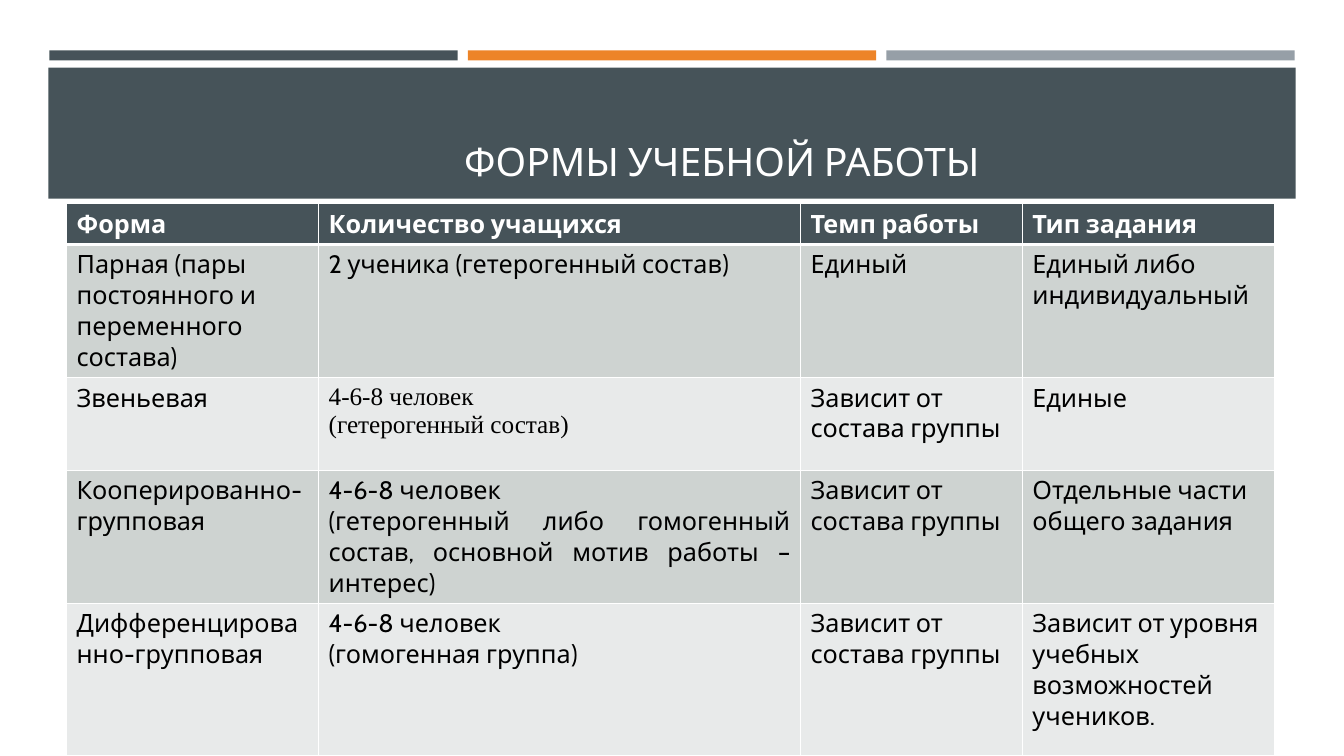
from lxml.etree import SubElement
from pptx import Presentation
from pptx.dml.color import RGBColor
from pptx.enum.shapes import MSO_SHAPE
from pptx.enum.text import MSO_ANCHOR, MSO_AUTO_SIZE, PP_ALIGN
from pptx.oxml.ns import qn
from pptx.util import Inches, Pt

COLORS = {
    "slate": "465359", "orange": "ED8428", "gray": "969FA7",
    "dark_row": "CED3D1", "light_row": "E8EAEA",
    "white": "FFFFFF", "black": "000000",
}
FONT = "Cabin"
COLUMN_WIDTHS = [2.5, 4.78, 2.2, 2.5]
ROW_HEIGHTS = [0.38, 1.23, 0.92, 1.23, 1.51]
# A line break inside a cell starts a new paragraph
ROWS = [
    ["Форма", "Количество учащихся", "Темп работы", "Тип задания"],
    ["Парная (пары постоянного и переменного состава)",
     "2 ученика (гетерогенный состав)", "Единый",
     "Единый либо индивидуальный"],
    ["Звеньевая", "4-6-8 человек\n(гетерогенный состав)",
     "Зависит от состава группы", "Единые"],
    ["Кооперированно-групповая",
     "4-6-8 человек\n(гетерогенный либо гомогенный состав, "
     "основной мотив работы – интерес)",
     "Зависит от состава группы", "Отдельные части общего задания"],
    ["Дифференцированно-групповая", "4-6-8 человек\n(гомогенная группа)",
     "Зависит от состава группы",
     "Зависит от уровня учебных возможностей учеников."],
]
SERIF_CELL = (2, 1)


def color(name):
    return RGBColor.from_string(COLORS[name])


def set_all(target, **values):
    for name, value in values.items():
        setattr(target, name, value)


def format_font(font, color_name, **values):
    set_all(font, **values)
    font.color.rgb = color(color_name)


def add_block(slide, left, top, width, height, fill):
    shape = slide.shapes.add_shape(
        MSO_SHAPE.RECTANGLE, *map(Inches, (left, top, width, height)))
    shape.shadow.inherit = False
    shape.fill.solid()
    shape.fill.fore_color.rgb = color(fill)
    shape.line.fill.background()


def add_accent_bars(slide, left, top, width, height, gap=0.1):
    names = ["slate", "orange", "gray"]
    bar_width = (width - gap * (len(names) - 1)) / len(names)
    for index, name in enumerate(names):
        add_block(slide, left + index * (bar_width + gap), top,
                  bar_width, height, name)


def add_title_band(slide, left, top, width, height):
    add_block(slide, left, top, width, height, "slate")
    title = slide.shapes.title
    # Bring the title in front of the band
    slide.shapes._spTree.append(title._element)
    set_all(title, left=Inches(left + 0.16), top=Inches(top + 0.1),
            width=Inches(width - 0.31), height=Inches(height - 0.19))
    frame = title.text_frame
    frame.text = "ФОРМЫ УЧЕБНОЙ РАБОТЫ"
    set_all(frame, auto_size=MSO_AUTO_SIZE.NONE, word_wrap=True,
            vertical_anchor=MSO_ANCHOR.BOTTOM, margin_left=Inches(1.08))
    paragraph = frame.paragraphs[0]
    paragraph.alignment = PP_ALIGN.CENTER
    format_font(paragraph.runs[0].font, "white", name=FONT, size=Pt(28))


def set_borders(cell, widths):
    properties = cell._tc.get_or_add_tcPr()
    for index, (side, width) in enumerate(widths.items()):
        line = properties.makeelement(qn("a:ln" + side), {"w": str(Pt(width))})
        fill = SubElement(line, qn("a:solidFill"))
        SubElement(fill, qn("a:srgbClr"), val=COLORS["white"])
        # Borders come before the cell fill
        properties.insert(index, line)


def format_cell(cell, row, column):
    header = row == 0
    cell.text = ROWS[row][column]
    cell.fill.solid()
    cell.fill.fore_color.rgb = color(
        "slate" if header else "dark_row" if row % 2 else "light_row")
    set_borders(cell, {"L": 1, "R": 1, "T": 3 if row == 1 else 1,
                       "B": 3 if header else 1})
    paragraphs = cell.text_frame.paragraphs
    for paragraph in paragraphs:
        if len(paragraphs) > 1:
            paragraph.alignment = PP_ALIGN.JUSTIFY
        format_font(
            paragraph.runs[0].font, "white" if header else "black",
            name="Times New Roman" if (row, column) == SERIF_CELL else FONT,
            size=Pt(18), bold=header)


def add_forms_table(slide, left, top):
    table = slide.shapes.add_table(
        len(ROW_HEIGHTS), len(COLUMN_WIDTHS), Inches(left), Inches(top),
        Inches(sum(COLUMN_WIDTHS)), Inches(sum(ROW_HEIGHTS))).table
    for column, width in zip(table.columns, COLUMN_WIDTHS):
        column.width = Inches(width)
    for row, height in zip(table.rows, ROW_HEIGHTS):
        row.height = Inches(height)
    for row in range(len(ROWS)):
        for column in range(len(COLUMN_WIDTHS)):
            format_cell(table.cell(row, column), row, column)


def main():
    presentation = Presentation()
    set_all(presentation, slide_width=Inches(13.33), slide_height=Inches(7.5))
    slide = presentation.slides.add_slide(presentation.slide_layouts[5])
    add_accent_bars(slide, 0.49, 0.5, 12.35, 0.1)
    add_title_band(slide, 0.48, 0.67, 12.37, 1.3)
    add_forms_table(slide, 0.66, 2.02)
    presentation.save("out.pptx")


if __name__ == "__main__":
    main()
